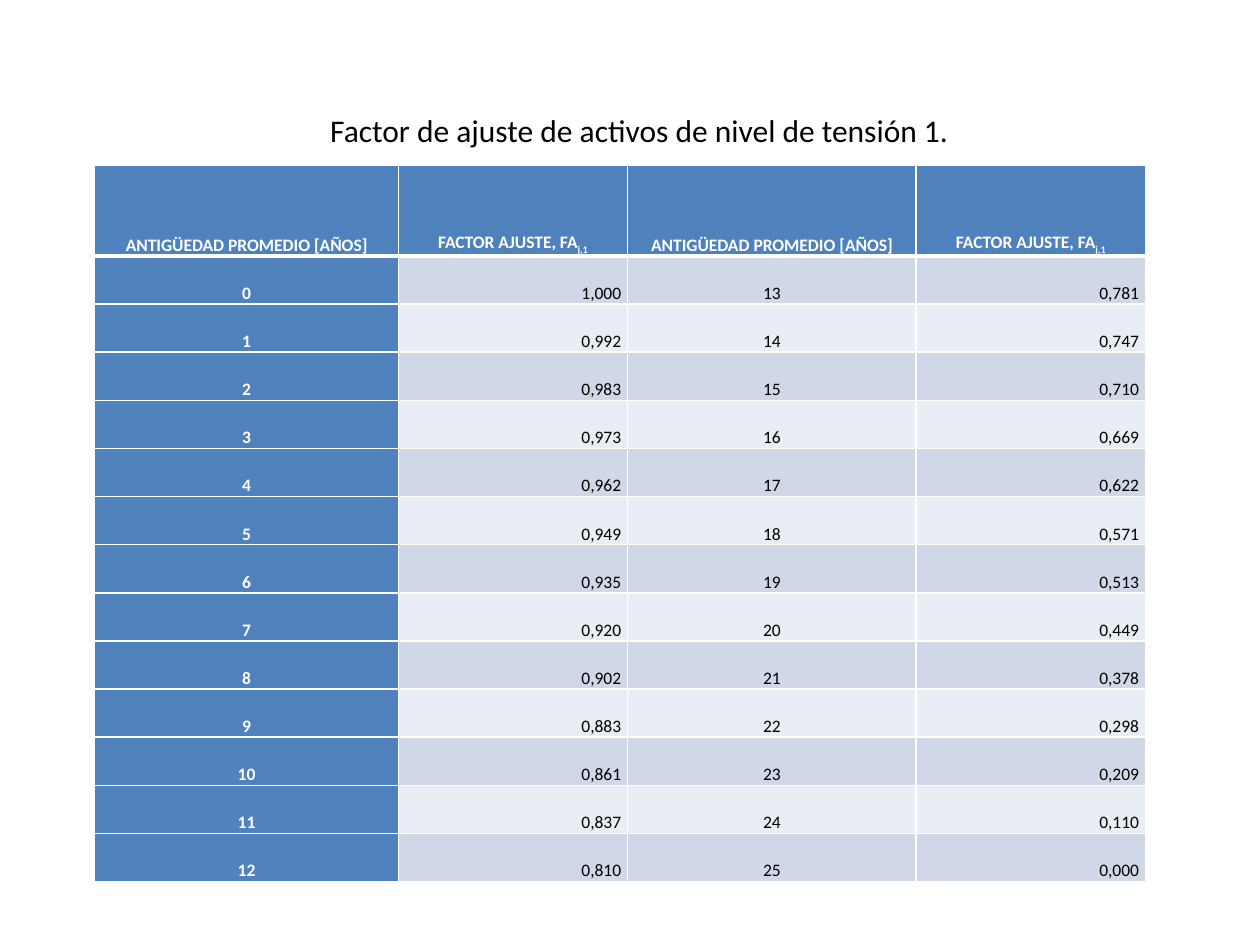
"""Build a slide with a table of adjustment factors by average asset age."""
from pptx import Presentation, util as u
from pptx.dml.color import RGBColor
from pptx.enum import text
from pptx.oxml import parse_xml
from pptx.oxml.ns import nsdecls

WHITE = RGBColor(0xFF, 0xFF, 0xFF)
BLACK = RGBColor(0, 0, 0)
BLUE = RGBColor(0x4F, 0x81, 0xBD)
BANDS = (RGBColor(0xD0, 0xD8, 0xE8), RGBColor(0xE9, 0xED, 0xF4))
CENTER, RIGHT = text.PP_ALIGN.CENTER, text.PP_ALIGN.RIGHT

COLUMN_WIDTHS = (6.12, 4.62, 5.82, 4.62)
HEADER_HEIGHT, ROW_HEIGHT = 1.83, 0.97
HEADERS = (("ANTIGÜEDAD PROMEDIO [AÑOS]", ""), ("FACTOR AJUSTE, FA", "j,1")) * 2
FACTORS = (
    "1,000", "0,992", "0,983", "0,973", "0,962", "0,949", "0,935",
    "0,920", "0,902", "0,883", "0,861", "0,837", "0,810",
    "0,781", "0,747", "0,710", "0,669", "0,622", "0,571", "0,513",
    "0,449", "0,378", "0,298", "0,209", "0,110", "0,000",
)


def write(frame, words, subscript="", size=10, color=BLACK, bold=False, align=CENTER, before=0):
    para = frame.paragraphs[0]
    para.alignment = align
    para.space_before = u.Pt(before)
    for content, baseline in ((words, None), (subscript, "-25000")):
        if not content:
            continue
        span = para.add_run()
        span.text = content
        span.font.name = "Calibri"
        span.font.size = u.Pt(size)
        span.font.bold = bold
        span.font.color.rgb = color
        if baseline:
            span._r.get_or_add_rPr().set("baseline", baseline)


def add_borders(cell, bottom=1, top=1):
    properties = cell._tc.get_or_add_tcPr()
    for side, width in (("L", 1), ("R", 1), ("T", top), ("B", bottom)):
        properties.append(parse_xml(
            f'<a:ln{side} {nsdecls("a")} w="{u.Pt(width)}"><a:solidFill>'
            f'<a:srgbClr val="{WHITE}"/></a:solidFill></a:ln{side}>'))


def fill_cell(cell, words, fill, bottom=1, top=1, **style):
    cell.margin_left = cell.margin_right = u.Cm(0.13)
    cell.margin_top = cell.margin_bottom = 0
    cell.vertical_anchor = text.MSO_ANCHOR.BOTTOM
    add_borders(cell, bottom, top)
    cell.fill.solid()
    cell.fill.fore_color.rgb = fill
    write(cell.text_frame, words, before=12, **style)


def add_title(page, words):
    box = page.shapes.add_textbox(u.Cm(2.49), u.Cm(2.11), u.Cm(20.8), u.Cm(1.03))
    box.text_frame.word_wrap = True
    write(box.text_frame, words, size=18)


def add_factor_table(page):
    half = len(FACTORS) // 2
    frame = page.shapes.add_table(
        half + 1, len(COLUMN_WIDTHS), u.Cm(1.91), u.Cm(3.33),
        u.Cm(sum(COLUMN_WIDTHS)), u.Cm(HEADER_HEIGHT + half * ROW_HEIGHT))
    table = frame.table
    for column, width in zip(table.columns, COLUMN_WIDTHS):
        column.width = u.Cm(width)
    for index, row in enumerate(table.rows):
        row.height = u.Cm(ROW_HEIGHT if index else HEADER_HEIGHT)
    for column, (words, subscript) in enumerate(HEADERS):
        fill_cell(table.cell(0, column), words, BLUE, bottom=3,
                  subscript=subscript, color=WHITE, bold=True)
    for age, factor in enumerate(FACTORS):
        block, index = divmod(age, half)
        band = BANDS[index % 2]
        top = 1 if index else 3
        first = block == 0
        fill_cell(table.cell(index + 1, 2 * block), str(age), BLUE if first else band,
                  top=top, color=WHITE if first else BLACK, bold=first)
        fill_cell(table.cell(index + 1, 2 * block + 1), factor, band, top=top, align=RIGHT)


def main():
    deck = Presentation()
    deck.slide_width, deck.slide_height = u.Cm(25.4), u.Cm(19.05)
    page = deck.slides.add_slide(deck.slide_layouts[6])
    add_factor_table(page)
    add_title(page, "Factor de ajuste de activos de nivel de tensión 1.")
    deck.save("out.pptx")


if __name__ == "__main__":
    main()
